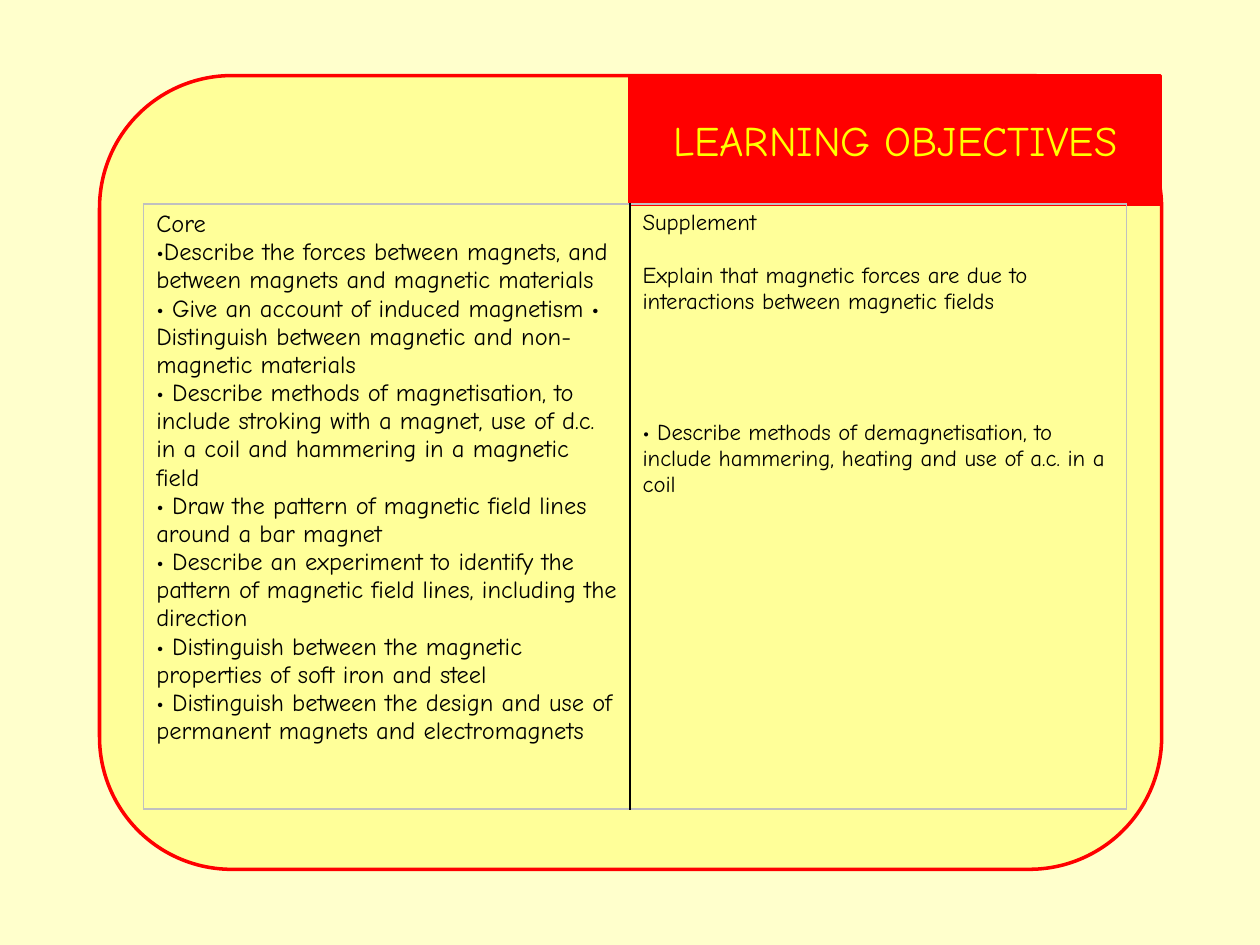
"""Build the learning objectives slide: a framed panel, a title tab and a two-column table."""
from copy import deepcopy

from lxml import etree
from pptx import Presentation
from pptx.dml.color import RGBColor
from pptx.enum.shapes import MSO_SHAPE as SHAPE
from pptx.enum.text import MSO_ANCHOR as ANCHOR, MSO_AUTO_SIZE as AUTO, PP_ALIGN as ALIGN
from pptx.oxml.ns import qn
from pptx.util import Inches, Pt

FONT = "Comic Neue"
CORE = [
    "Core",
    "•Describe the forces between magnets, and between magnets and magnetic materials",
    "• Give an account of induced magnetism • Distinguish between magnetic and non-magnetic materials",
    "• Describe methods of magnetisation, to include stroking with a magnet, use of d.c. in a coil and hammering in a magnetic field",
    "• Draw the pattern of magnetic field lines around a bar magnet",
    "• Describe an experiment to identify the pattern of magnetic field lines, including the direction",
    "• Distinguish between the magnetic properties of soft iron and steel",
    "• Distinguish between the design and use of permanent magnets and electromagnets",
]
SUPPLEMENT = [
    "Supplement",
    "Explain that magnetic forces are due to interactions between magnetic fields",
    "• Describe methods of demagnetisation, to include hammering, heating and use of a.c. in a coil",
]


def paint(obj, color):
    obj.fill.solid()
    obj.fill.fore_color.rgb = RGBColor.from_string(color)


def add_run(p, text, size, color):
    r = p.add_run()
    r.text = text
    r.font.name = FONT
    r.font.size = Pt(size)
    r.font.color.rgb = RGBColor.from_string(color)


prs = Presentation()
prs.slide_width, prs.slide_height = Inches(10), Inches(7.5)
s = prs.slides.add_slide(prs.slide_layouts[5])

backdrop = s.shapes.add_shape(SHAPE.RECTANGLE, 0, 0, prs.slide_width, prs.slide_height)
backdrop.shadow.inherit = False
paint(backdrop, "FFFFCC")
backdrop.line.fill.background()

panel = s.shapes.add_shape(
    SHAPE.ROUNDED_RECTANGLE, Inches(0.79), Inches(0.6), Inches(8.43), Inches(6.3))
panel.shadow.inherit = False
paint(panel, "FFFF99")

title = s.shapes.title
title.left, title.top = Inches(5), Inches(0.6)
title.width, title.height = Inches(4.21), Inches(1.02)
title.element.spPr.append(deepcopy(panel.element.spPr.find(qn("a:prstGeom"))))
paint(title, "FF0000")
panel.element.addnext(title.element)

for sp in (panel, title):
    sp.line.color.rgb = RGBColor.from_string("FF0000")
    sp.line.width = Pt(2)

tf = title.text_frame
tf.word_wrap = True
tf.auto_size = AUTO.NONE
tf.vertical_anchor = ANCHOR.MIDDLE
p = tf.paragraphs[0]
p.alignment = ALIGN.CENTER
add_run(p, "LEARNING OBJECTIVES", 24, "FFFF00")

table = s.shapes.add_table(
    1, 2, Inches(1.14), Inches(1.62), Inches(7.8), Inches(4.8)).table
table.first_row = table.horz_banding = False
columns = [
    (3.86, CORE, 14, [0] * len(CORE), "lnR"),
    (3.94, SUPPLEMENT, 13, [0, 15, 60], "lnL"),
]
for i, (width, lines, size, gaps, inner) in enumerate(columns):
    table.columns[i].width = Inches(width)
    cell = table.cell(0, i)
    for j, (text, gap) in enumerate(zip(lines, gaps)):
        tf = cell.text_frame
        p = tf.add_paragraph() if j else tf.paragraphs[0]
        p.space_before = Pt(gap)
        add_run(p, text, size, "000000")
    tcPr = cell._tc.get_or_add_tcPr()
    for side in ("lnL", "lnR", "lnT", "lnB"):
        ln = etree.SubElement(tcPr, qn(f"a:{side}"), w=str(Pt(1)))
        fill = etree.SubElement(ln, qn("a:solidFill"))
        color = "000000" if side == inner else "C0C0C0"
        etree.SubElement(fill, qn("a:srgbClr"), val=color)
    cell.fill.background()

prs.save("out.pptx")
